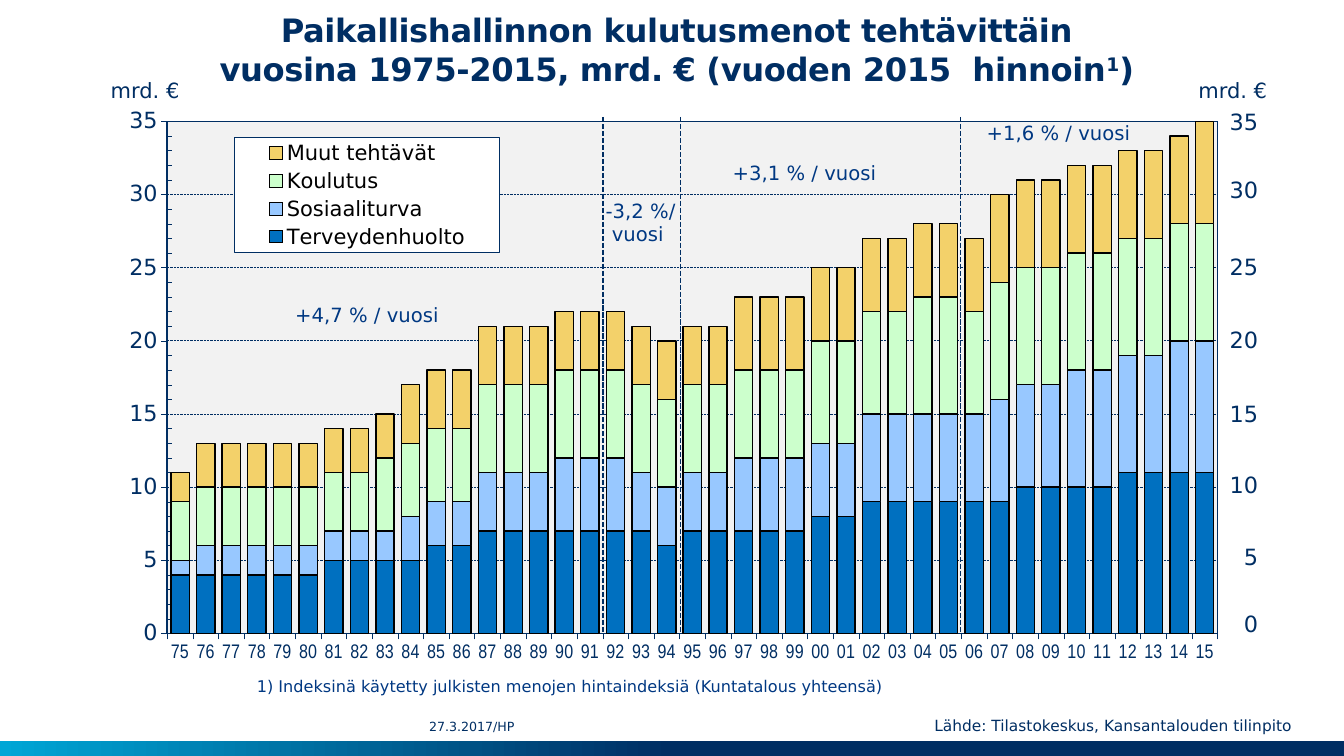
import pptx
import pptx.chart.data
import pptx.dml.color
import pptx.enum.chart
import pptx.enum.dml
import pptx.enum.shapes
import pptx.enum.text
import pptx.oxml
import pptx.oxml.ns
import pptx.util

Inches = pptx.util.Inches
Pt = pptx.util.Pt
RGBColor = pptx.dml.color.RGBColor
PP_ALIGN = pptx.enum.text.PP_ALIGN
MSO_ANCHOR = pptx.enum.text.MSO_ANCHOR
MSO_AUTO_SIZE = pptx.enum.text.MSO_AUTO_SIZE
MSO_LINE = pptx.enum.dml.MSO_LINE
XL_TICK_MARK = pptx.enum.chart.XL_TICK_MARK

NAVY = RGBColor(0x00, 0x2E, 0x63)
NOTE_BLUE = RGBColor(0x00, 0x38, 0x82)
CYAN = RGBColor(0x00, 0xA6, 0xD6)
PLOT_GREY = RGBColor(0xF2, 0xF2, 0xF2)
WHITE = RGBColor(0xFF, 0xFF, 0xFF)
BLACK = RGBColor(0x00, 0x00, 0x00)
HEALTH_BLUE = RGBColor(0x00, 0x70, 0xC0)
SOCIAL_BLUE = RGBColor(0x98, 0xC8, 0xFF)
EDUCATION_GREEN = RGBColor(0xCC, 0xFF, 0xCC)
OTHER_YELLOW = RGBColor(0xF3, 0xD1, 0x6A)


def format_font(font, size, color, name="DejaVu Sans", bold=False):
    formats = {"size": Pt(size), "name": name, "bold": bold}
    for attribute, value in formats.items():
        setattr(font, attribute, value)
    font.color.rgb = color


def add_label(left, top, width, height, text, size, color, align=PP_ALIGN.LEFT):
    label = slide.shapes.add_textbox(Inches(left), Inches(top), Inches(width), Inches(height))
    frame = label.text_frame
    frame.text = text
    frame.word_wrap = False
    frame.auto_size = MSO_AUTO_SIZE.SHAPE_TO_FIT_TEXT
    for paragraph in frame.paragraphs:
        paragraph.alignment = align
        for run in paragraph.runs:
            format_font(run.font, size, color)
    return frame


deck = pptx.Presentation()
deck.slide_width = Inches(40 / 3)
deck.slide_height = Inches(7.5)
slide = deck.slides.add_slide(deck.slide_layouts[5])

footer_band = slide.shapes.add_shape(
    pptx.enum.shapes.MSO_SHAPE.RECTANGLE, 0, Inches(7.35), deck.slide_width, Inches(0.15))
footer_band.shadow.inherit = False
footer_band.line.fill.background()
footer_band.fill.gradient()
footer_band.fill.gradient_angle = 0
for stop, color, position in zip(footer_band.fill.gradient_stops, (CYAN, NAVY), (0, 0.5)):
    stop.color.rgb = color
    stop.position = position

heading = slide.shapes.title
heading_place = {"left": 2.03, "top": 0.13, "width": 9.37, "height": 0.79}
for attribute, value in heading_place.items():
    setattr(heading, attribute, Inches(value))
heading_frame = heading.text_frame
heading_formats = {
    "margin_left": 0, "margin_right": 0,
    "margin_top": Inches(0.05), "margin_bottom": Inches(0.05),
    "vertical_anchor": MSO_ANCHOR.BOTTOM,
    "word_wrap": True, "auto_size": MSO_AUTO_SIZE.NONE,
}
for attribute, value in heading_formats.items():
    setattr(heading_frame, attribute, value)
heading_line = heading_frame.paragraphs[0]
heading_line.alignment = PP_ALIGN.CENTER
heading_parts = [
    ("Paikallishallinnon kulutusmenot tehtävittäin\v"
     "vuosina 1975-2015, mrd. € (vuoden 2015  hinnoin", 0),
    ("1", 30000),
    (")", 0),
]
for text, baseline in heading_parts:
    for index, piece in enumerate(text.split("\v")):
        if index:
            heading_line.add_line_break()
        run = heading_line.add_run()
        run.text = piece
        format_font(run.font, 23, NAVY, bold=True)
        run_properties = run._r.get_or_add_rPr()
        run_properties.set("spc", "-30")
        run_properties.set("baseline", str(baseline))

spending = [
    ("Terveydenhuolto", HEALTH_BLUE, [
        4, 4, 4, 4, 4, 4, 5, 5, 5, 5, 6, 6, 7, 7, 7, 7, 7, 7, 7, 6, 7,
        7, 7, 7, 7, 8, 8, 9, 9, 9, 9, 9, 9, 10, 10, 10, 10, 11, 11, 11, 11]),
    ("Sosiaaliturva", SOCIAL_BLUE, [
        1, 2, 2, 2, 2, 2, 2, 2, 2, 3, 3, 3, 4, 4, 4, 5, 5, 5, 4, 4, 4,
        4, 5, 5, 5, 5, 5, 6, 6, 6, 6, 6, 7, 7, 7, 8, 8, 8, 8, 9, 9]),
    ("Koulutus", EDUCATION_GREEN, [
        4, 4, 4, 4, 4, 4, 4, 4, 5, 5, 5, 5, 6, 6, 6, 6, 6, 6, 6, 6, 6,
        6, 6, 6, 6, 7, 7, 7, 7, 8, 8, 7, 8, 8, 8, 8, 8, 8, 8, 8, 8]),
    ("Muut tehtävät", OTHER_YELLOW, [
        2, 3, 3, 3, 3, 3, 3, 3, 3, 4, 4, 4, 4, 4, 4, 4, 4, 4, 4, 4, 4,
        4, 5, 5, 5, 5, 5, 5, 5, 5, 5, 5, 6, 6, 6, 6, 6, 6, 6, 6, 7]),
]
spending_data = pptx.chart.data.CategoryChartData(number_format="0")
spending_data.categories = [f"{year % 100:02d}" for year in range(1975, 2016)]
for task, color, values in spending:
    spending_data.add_series(task, values)
chart = slide.shapes.add_chart(
    pptx.enum.chart.XL_CHART_TYPE.COLUMN_STACKED,
    Inches(1), Inches(1.07), Inches(11.18), Inches(5.59), spending_data).chart
chart.has_title = False
format_font(chart.font, 15, NAVY)

columns = chart.plots[0]
columns.gap_width = 40
columns.overlap = 100
columns.vary_by_categories = False
for series, (task, color, values) in zip(columns.series, spending):
    series.format.fill.solid()
    series.format.fill.fore_color.rgb = color
    series.format.line.color.rgb = BLACK
    series.format.line.width = Pt(1)

years = chart.category_axis
amounts = chart.value_axis
amount_formats = {
    "minimum_scale": 0, "maximum_scale": 35, "major_unit": 5, "minor_unit": 1,
    "minor_tick_mark": XL_TICK_MARK.INSIDE, "has_major_gridlines": True,
}
for attribute, value in amount_formats.items():
    setattr(amounts, attribute, value)
for axis, size, font_name in ((years, 14, "Arial Narrow"), (amounts, 15.9, "DejaVu Sans")):
    axis.major_tick_mark = XL_TICK_MARK.OUTSIDE
    axis.format.line.color.rgb = NAVY
    axis.format.line.width = Pt(0.31)
    format_font(axis.tick_labels.font, size, NAVY, font_name)
amounts.tick_labels.number_format = "0"
amounts.tick_labels.number_format_is_linked = False
grid = amounts.major_gridlines.format.line
grid.color.rgb = NAVY
grid.width = Pt(0.5)
grid.dash_style = MSO_LINE.ROUND_DOT

chart.has_legend = True
chart.legend.position = pptx.enum.chart.XL_LEGEND_POSITION.RIGHT
chart.legend.include_in_layout = False
format_font(chart.legend.font, 15, BLACK)

namespaces = pptx.oxml.ns.nsdecls("c", "a")
layouts = [
    (chart.plots[0]._element.getparent(), '<c:layoutTarget val="inner"/>',
     (0.059, 0.024, 0.932, 0.909), PLOT_GREY, 1.25),
    (chart.legend._element, "", (0.119, 0.053, 0.235, 0.203), WHITE, 0.75),
]
for area, target, box, fill, line_width in layouts:
    for old_layout in area.findall(pptx.oxml.ns.qn("c:layout")):
        area.remove(old_layout)
    modes = "".join(f'<c:{side}Mode val="edge"/>' for side in "xy")
    sizes = "".join(f'<c:{side} val="{value}"/>' for side, value in zip("xywh", box))
    layout = pptx.oxml.parse_xml(
        f"<c:layout {namespaces}><c:manualLayout>{target}{modes}{sizes}</c:manualLayout></c:layout>")
    look = pptx.oxml.parse_xml(
        f'<c:spPr {namespaces}><a:solidFill><a:srgbClr val="{fill}"/></a:solidFill>'
        f'<a:ln w="{Pt(line_width)}"><a:solidFill><a:srgbClr val="{NAVY}"/></a:solidFill></a:ln></c:spPr>')
    if target:
        area.insert(0, layout)
        area.append(look)
    else:
        area.find(pptx.oxml.ns.qn("c:legendPos")).addnext(layout)
        area.find(pptx.oxml.ns.qn("c:txPr")).addprevious(look)
years._element.find(pptx.oxml.ns.qn("c:noMultiLvlLbl")).addprevious(
    pptx.oxml.parse_xml(f'<c:tickLblSkip {namespaces} val="1"/>'))

scale_tops = {0: 6, 5: 5.34, 10: 4.63, 15: 3.92, 20: 3.19, 25: 2.46, 30: 1.7, 35: 1.02}
for amount, top in scale_tops.items():
    width = 0.19 + 0.15 * len(str(amount))
    add_label(12.58 - width, top, width, 0.37, str(amount), 16, NAVY, PP_ALIGN.RIGHT)
for left in (1, 11.79):
    add_label(left, 0.72, 0.91, 0.35, "mrd. €", 15, NAVY)

for left in (5.98, 6.75, 9.53):
    divider = slide.shapes.add_connector(
        pptx.enum.shapes.MSO_CONNECTOR.STRAIGHT, Inches(left), Inches(1.16), Inches(left), Inches(6.28))
    divider.line.color.rgb = NAVY
    divider.line.width = Pt(1.25)
    divider.line.dash_style = MSO_LINE.SQUARE_DOT
    divider._element.spPr.append(pptx.oxml.parse_xml(f"<a:effectLst {namespaces}/>"))

growth_rates = [
    (2.83, 2.96, 1.71, 0.34, "+4,7 % / vuosi"),
    (5.91, 1.92, 0.98, 0.57, "-3,2 %/\n vuosi"),
    (7.17, 1.55, 1.71, 0.34, "+3,1 % / vuosi"),
    (9.69, 1.15, 1.71, 0.34, "+1,6 % / vuosi"),
]
for left, top, width, height, rate in growth_rates:
    add_label(left, top, width, height, rate, 14, NOTE_BLUE)

add_label(2.45, 6.66, 6.53, 0.29,
          "1) Indeksinä käytetty julkisten menojen hintaindeksiä (Kuntatalous yhteensä)", 11.5, NOTE_BLUE)
add_label(9.17, 7.06, 3.95, 0.29, "Lähde: Tilastokeskus, Kansantalouden tilinpito", 11, NAVY)
date_frame = add_label(4.02, 7.06, 1.32, 0.29, "27.3.2017/HP", 9, NAVY, PP_ALIGN.CENTER)
date_formats = {
    "margin_left": 0, "margin_right": 0, "margin_top": 0, "margin_bottom": 0,
    "vertical_anchor": MSO_ANCHOR.MIDDLE, "word_wrap": True, "auto_size": MSO_AUTO_SIZE.NONE,
}
for attribute, value in date_formats.items():
    setattr(date_frame, attribute, value)

deck.save("out.pptx")
